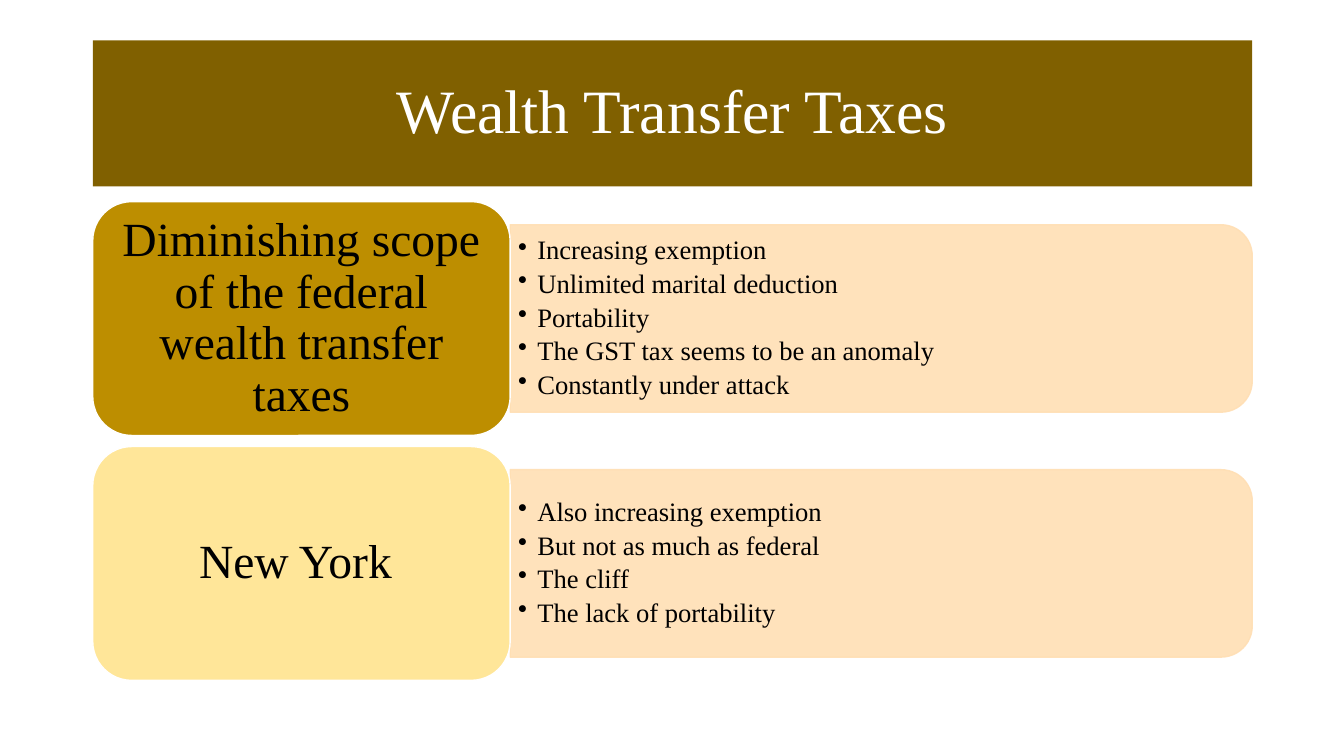
import pptx
import pptx.util
import pptx.dml.color
import pptx.enum.shapes
import pptx.enum.text
import pptx.oxml.ns
import lxml.etree

Inches = pptx.util.Inches
Pt = pptx.util.Pt
RGBColor = pptx.dml.color.RGBColor
MSO_SHAPE = pptx.enum.shapes.MSO_SHAPE
PP_ALIGN = pptx.enum.text.PP_ALIGN
MIDDLE = pptx.enum.text.MSO_ANCHOR.MIDDLE
qn = pptx.oxml.ns.qn

WHITE = RGBColor(0xFF, 0xFF, 0xFF)
BLACK = RGBColor(0x00, 0x00, 0x00)
BROWN = RGBColor(0x80, 0x60, 0x00)
GOLD = RGBColor(0xBD, 0x8E, 0x00)
YELLOW = RGBColor(0xFF, 0xE6, 0x99)
PEACH = RGBColor(0xFF, 0xDF, 0xB4)

LEFT, WIDTH = 0.92, 11.5
ROW_TOP, ROW_PITCH = 2, 2.43
CARD_W, CARD_H = 4.14, 2.32
PANEL_W, PANEL_H = WIDTH - CARD_W, 1.86
LIST_W, LIST_H = 7.27, 1.68

ROWS = [
    ("Diminishing scope of the federal wealth transfer taxes", GOLD,
     ["Increasing exemption", "Unlimited marital deduction", "Portability",
      "The GST tax seems to be an anomaly", "Constantly under attack"]),
    ("New York ", YELLOW,
     ["Also increasing exemption", "But not as much as federal", "The cliff",
      "The lack of portability"]),
]


def set_frame(tf, x_inset, y_inset):
    tf.word_wrap = True
    tf.vertical_anchor = MIDDLE
    tf.margin_left = tf.margin_right = Inches(x_inset)
    tf.margin_top = tf.margin_bottom = Inches(y_inset)


def add_text(p, text, size, color):
    p.line_spacing = 0.9
    r = p.add_run()
    r.text = text
    r.font.name = "Times New Roman"
    r.font.size = Pt(size)
    r.font.color.rgb = color


prs = pptx.Presentation()
prs.slide_width = Inches(13.33)
prs.slide_height = Inches(7.5)
s = prs.slides.add_slide(prs.slide_layouts[5])

title = s.shapes.title
title.left, title.top = Inches(LEFT), Inches(0.4)
title.width, title.height = Inches(WIDTH), Inches(1.45)
title.fill.solid()
title.fill.fore_color.rgb = BROWN
set_frame(title.text_frame, 0.1, 0.05)
p = title.text_frame.paragraphs[0]
p.alignment = PP_ALIGN.CENTER
add_text(p, "Wealth Transfer Taxes", 44, WHITE)

list_left = LEFT + CARD_W
panel_mid = list_left + PANEL_W / 2
for i, (heading, color, points) in enumerate(ROWS):
    top = ROW_TOP + i * ROW_PITCH
    mid = top + CARD_H / 2

    panel = s.shapes.add_shape(
        MSO_SHAPE.ROUND_2_SAME_RECTANGLE,
        Inches(panel_mid - PANEL_H / 2), Inches(mid - PANEL_W / 2),
        Inches(PANEL_H), Inches(PANEL_W))
    panel.rotation = 90
    panel.shadow.inherit = False
    panel.line.width = Pt(1)
    for fill in (panel.fill, panel.line.fill):
        fill.solid()
        fill.fore_color.rgb = PEACH
    for clr in panel.element.spPr.iter(qn("a:srgbClr")):
        lxml.etree.SubElement(clr, qn("a:alpha"), val="90000")

    sp = s.shapes.add_textbox(Inches(list_left), Inches(mid - LIST_H / 2),
                              Inches(LIST_W), Inches(LIST_H))
    tf = sp.text_frame
    set_frame(tf, 0.08, 0.04)
    for j, point in enumerate(points):
        p = tf.paragraphs[0] if j == 0 else tf.add_paragraph()
        p.level = 1
        add_text(p, point, 19, BLACK)
        p.space_after = Pt(3.5)
        pPr = p._p.get_or_add_pPr()
        pPr.set("marL", str(Inches(0.19)))
        pPr.set("indent", str(-Inches(0.19)))
        lxml.etree.SubElement(pPr, qn("a:buChar"), char="•")

    card = s.shapes.add_shape(MSO_SHAPE.ROUNDED_RECTANGLE, Inches(LEFT),
                              Inches(top), Inches(CARD_W), Inches(CARD_H))
    card.shadow.inherit = False
    card.fill.solid()
    card.fill.fore_color.rgb = color
    card.line.color.rgb = WHITE
    card.line.width = Pt(1)
    set_frame(card.text_frame, 0.14, 0.07)
    p = card.text_frame.paragraphs[0]
    p.alignment = PP_ALIGN.CENTER
    add_text(p, heading, 34, BLACK)

prs.save("out.pptx")
